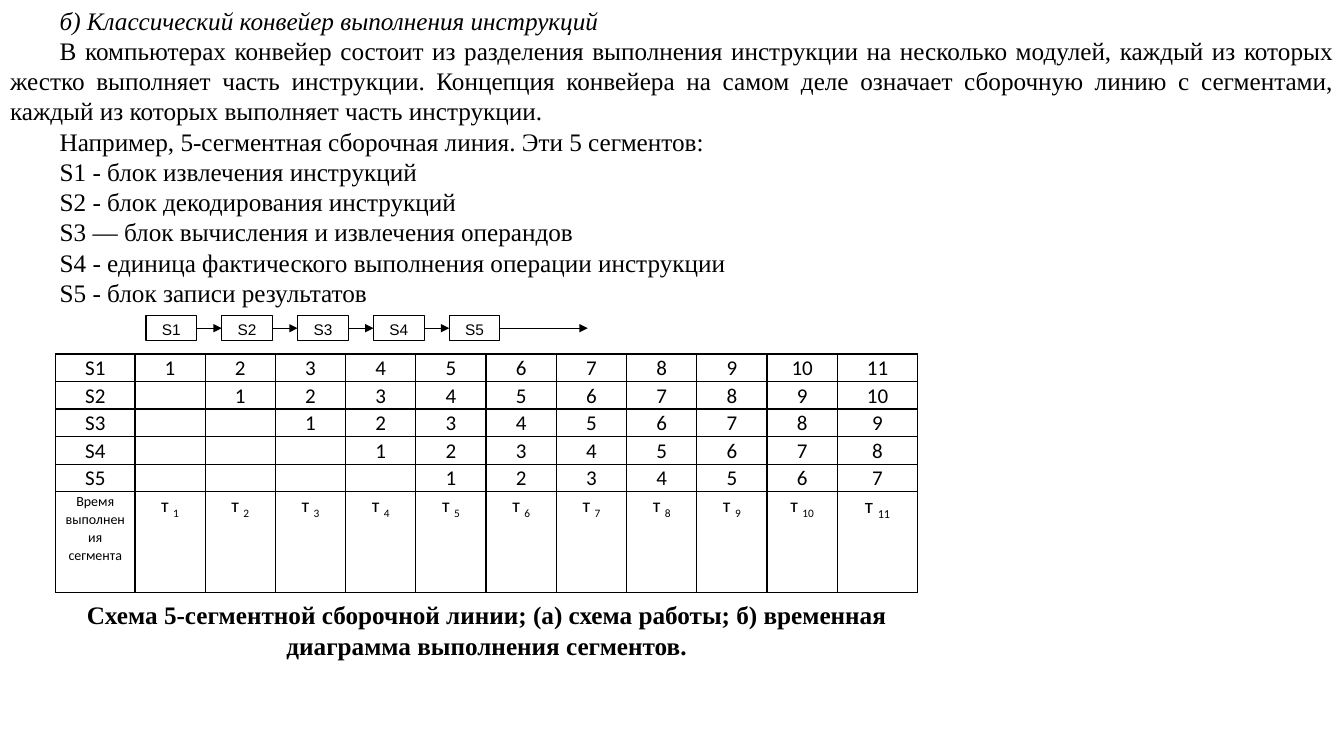
import pptx
import pptx.util
import pptx.dml.color
import pptx.enum.shapes
import pptx.enum.text
import pptx.oxml.ns
import lxml.etree

Cm = pptx.util.Cm
Pt = pptx.util.Pt
ALIGN = pptx.enum.text.PP_ALIGN
COLORS = {"ink": "000000", "paper": "FFFFFF"}
SERIF = {"name": "Times New Roman", "size": Pt(18), "bold": False, "italic": False}
HEADING = SERIF | {"italic": True}
CAPTION = SERIF | {"bold": True}
BLOCK = {"name": "Arial", "size": Pt(11)}
CELL = {"name": "Calibri", "size": Pt(15)}
TIME = CELL | {"size": Pt(14)}
TIME_LABEL = CELL | {"size": Pt(10)}
SEGMENTS = ["S1", "S2", "S3", "S4", "S5"]
STEPS = 11
TITLE = "б) Классический конвейер выполнения инструкций"
BODY = [
    "В компьютерах конвейер состоит из разделения выполнения инструкции на несколько модулей, "
    "каждый из которых жестко выполняет часть инструкции. Концепция конвейера на самом деле "
    "означает сборочную линию с сегментами, каждый из которых выполняет часть инструкции.",
    "Например, 5-сегментная сборочная линия. Эти 5 сегментов:",
    "S1 - блок извлечения инструкций",
    "S2 - блок декодирования инструкций",
    "S3 — блок вычисления и извлечения операндов",
    "S4 - единица фактического выполнения операции инструкции",
    "S5 - блок записи результатов",
]
CAPTION_TEXT = ("Схема 5-сегментной сборочной линии; (а) схема работы; "
                "б) временная диаграмма выполнения сегментов.")


def color(name):
    return pptx.dml.color.RGBColor.from_string(COLORS[name])


def apply(target, values):
    for name, value in values.items():
        setattr(target, name, value)


def add_child(parent, tag, **attributes):
    child = lxml.etree.SubElement(parent, pptx.oxml.ns.qn(tag))
    for name, value in attributes.items():
        child.set(name, value)
    return child


def add_span(para, text, font):
    span = para.add_run()
    span.text = text
    apply(span.font, font)
    span.font.color.rgb = color("ink")
    return span


def fill_placeholder(holder, box, texts, font, top_inset):
    apply(holder, dict(zip(("left", "top", "width", "height"), box)))
    frame = holder.text_frame
    apply(frame, {"word_wrap": True, "auto_size": pptx.enum.text.MSO_AUTO_SIZE.NONE,
                  "vertical_anchor": pptx.enum.text.MSO_ANCHOR.TOP,
                  "margin_top": top_inset, "margin_bottom": 0})
    for index, text in enumerate(texts):
        para = frame.add_paragraph() if index else frame.paragraphs[0]
        properties = para._p.get_or_add_pPr()
        properties.set("marL", "0")
        properties.set("indent", str(Cm(1.25)))
        add_child(properties, "a:buNone")
        apply(para, {"alignment": ALIGN.JUSTIFY, "line_spacing": 1.0,
                     "space_before": Pt(0), "space_after": Pt(0)})
        add_span(para, text, font)


def add_arrow(slide, start, end, y):
    arrow = slide.shapes.add_connector(pptx.enum.shapes.MSO_CONNECTOR.STRAIGHT, start, y, end, y)
    arrow.line.width = Pt(0.75)
    arrow.line.color.rgb = color("ink")
    add_child(arrow.line._get_or_add_ln(), "a:tailEnd", type="triangle")
    add_child(arrow._element.spPr, "a:effectLst")


def add_pipeline(slide, box):
    left, top, width, height = box
    block_width, step = Cm(1.28), Cm(1.91)
    for index, segment in enumerate(SEGMENTS):
        x = left + index * step
        block = slide.shapes.add_shape(
            pptx.enum.shapes.MSO_SHAPE.RECTANGLE, x, top, block_width, height)
        block.shadow.inherit = False
        block.fill.solid()
        block.fill.fore_color.rgb = color("paper")
        block.line.color.rgb = color("ink")
        block.line.width = Pt(0.75)
        block.text_frame.vertical_anchor = pptx.enum.text.MSO_ANCHOR.TOP
        para = block.text_frame.paragraphs[0]
        para.alignment = ALIGN.CENTER
        add_span(para, segment, BLOCK)
        end = left + width if segment == SEGMENTS[-1] else x + step
        add_arrow(slide, x + block_width, end, top + height // 2)


def style_cell(cell):
    apply(cell, {"margin_left": Cm(0.23), "margin_right": Cm(0.23),
                 "margin_top": 0, "margin_bottom": 0})
    properties = cell._tc.get_or_add_tcPr()
    for side in ("a:lnL", "a:lnR", "a:lnT", "a:lnB"):
        border = add_child(properties, side, w=str(Pt(1)))
        add_child(add_child(border, "a:solidFill"), "a:srgbClr", val=COLORS["ink"])
    cell.fill.background()
    para = cell.text_frame.paragraphs[0]
    apply(para, {"alignment": ALIGN.CENTER, "line_spacing": 1.07})
    return para


def fill_cell(para, row, column):
    if row == len(SEGMENTS):
        if column == 0:
            add_span(para, "Время выполнения сегмента", TIME_LABEL)
            return
        font = CELL if column == STEPS else TIME
        add_span(para, "т ", font)
        number = add_span(para, str(column), font)
        number.font._element.set("baseline", "-25000")
    elif column == 0:
        add_span(para, SEGMENTS[row], CELL)
    elif column > row:
        add_span(para, str(column - row), CELL)
    else:
        add_child(para._p, "a:endParaRPr", sz="1500")


def add_timing_table(slide, box):
    left, top, width, height = box
    row_count = len(SEGMENTS) + 1
    table = slide.shapes.add_table(row_count, STEPS + 1, left, top, width, height).table
    apply(table, {"first_row": False, "horz_banding": False})
    widths = [Cm(2)] + [Cm(1.77)] * (STEPS - 1) + [Cm(2.03)]
    for column, column_width in zip(table.columns, widths):
        column.width = column_width
    heights = [Cm(0.68)] * len(SEGMENTS) + [Cm(2.54)]
    for row, row_height in zip(table.rows, heights):
        row.height = row_height
    for row in range(row_count):
        for column in range(STEPS + 1):
            fill_cell(style_cell(table.cell(row, column)), row, column)


def add_caption(slide, box):
    caption = slide.shapes.add_textbox(*box)
    caption.text_frame.word_wrap = True
    para = caption.text_frame.paragraphs[0]
    para.alignment = ALIGN.CENTER
    add_span(para, CAPTION_TEXT, CAPTION)


def build_pipeline_slide(deck):
    slide = deck.slides.add_slide(deck.slide_layouts[1])
    width, title_height = deck.slide_width, Cm(0.89)
    fill_placeholder(slide.shapes.title, (0, 0, width, title_height), [TITLE], HEADING, Cm(0.13))
    fill_placeholder(slide.placeholders[1], (0, title_height, width, Cm(7.06)), BODY, SERIF, 0)
    add_pipeline(slide, (Cm(3.68), Cm(7.95), Cm(11.13), Cm(0.64)))
    add_timing_table(slide, (Cm(1.4), Cm(8.92), Cm(21.73), Cm(5.94)))
    add_caption(slide, (Cm(1.4), Cm(14.99), Cm(21.73), Cm(1.8)))


def main():
    deck = pptx.Presentation()
    apply(deck, {"slide_width": Cm(33.87), "slide_height": Cm(19.05)})
    build_pipeline_slide(deck)
    deck.save("out.pptx")


if __name__ == "__main__":
    main()
